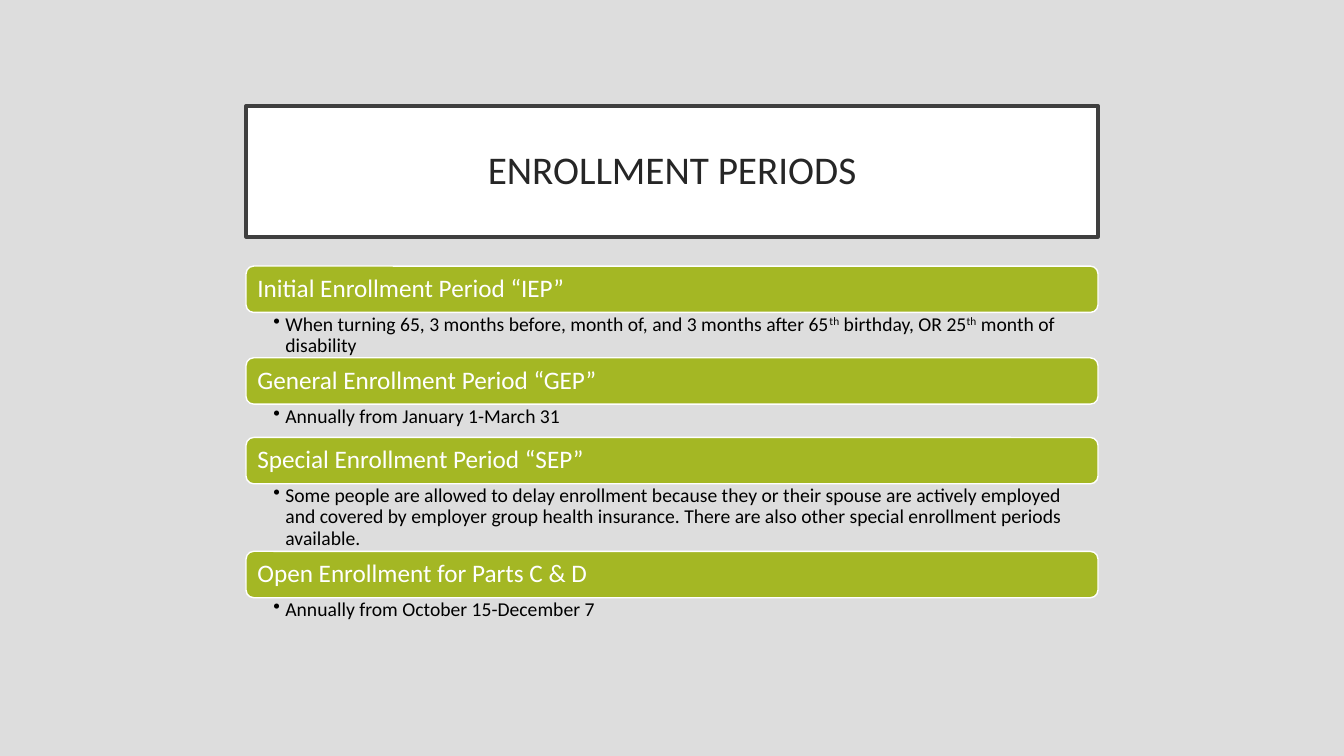
import pptx
import pptx.dml.color
import pptx.enum.shapes
import pptx.enum.text
import pptx.oxml
import pptx.oxml.ns
import pptx.util

RGBColor = pptx.dml.color.RGBColor
ANCHOR = pptx.enum.text.MSO_ANCHOR
ALIGN = pptx.enum.text.PP_ALIGN

PX = 9144  # 100 px to the inch
GREY = RGBColor(0xDD, 0xDD, 0xDD)
WHITE = RGBColor(0xFF, 0xFF, 0xFF)
GREEN = RGBColor(0xA4, 0xB7, 0x24)
FRAME = RGBColor(0x3F, 0x3F, 0x3F)
INK = RGBColor(0x26, 0x26, 0x26)
BLACK = RGBColor(0, 0, 0)

LEFT, WIDTH = 244, 845
BARS_TOP, BAR_HEIGHT = 264, 46

# Heading, height of the detail below it, and detail runs (odd ones are superscript)
PERIODS = [
    ("Initial Enrollment Period “IEP”", 45,
     ["When turning 65, 3 months before, month of, and 3 months after 65", "th",
      " birthday, OR 25", "th", " month of disability"]),
    ("General Enrollment Period “GEP”", 33, ["Annually from January 1-March 31"]),
    ("Special Enrollment Period “SEP”", 67,
     ["Some people are allowed to delay enrollment because they or their spouse "
      "are actively employed and covered by employer group health insurance. "
      "There are also other special enrollment periods available."]),
    ("Open Enrollment for Parts C & D", 33, ["Annually from October 15-December 7"]),
]


def px(n):
    return pptx.util.Emu(n * PX)


class Deck:
    font = "Calibri"

    def __init__(self, width, height):
        self.prs = pptx.Presentation()
        self.prs.slide_width, self.prs.slide_height = px(width), px(height)
        self.s = self.prs.slides.add_slide(self.prs.slide_layouts[5])
        fill = self.s.background.fill
        fill.solid()
        fill.fore_color.rgb = GREY

    def paint(self, sp, fill, line, weight):
        sp.fill.solid()
        sp.fill.fore_color.rgb = fill
        sp.line.color.rgb = line
        sp.line.width = pptx.util.Pt(weight)

    def frame(self, sp, anchor, insets):
        tf = sp.text_frame
        tf.word_wrap = True
        tf.auto_size = pptx.enum.text.MSO_AUTO_SIZE.NONE
        tf.vertical_anchor = anchor
        tf.margin_left, tf.margin_top, tf.margin_right, tf.margin_bottom = map(px, insets)
        return tf

    def style(self, p, size, color, align=ALIGN.LEFT):
        p.alignment = align
        p.line_spacing = 0.9
        p.space_before = p.space_after = pptx.util.Pt(0)
        for r in p.runs:
            r.font.name = self.font
            r.font.size = pptx.util.Pt(size)
            r.font.color.rgb = color

    def title(self, text, top, height):
        sp = self.s.shapes.title
        sp.left, sp.top, sp.width, sp.height = map(px, (LEFT, top, WIDTH, height))
        self.paint(sp, WHITE, FRAME, 2.5)
        tf = self.frame(sp, ANCHOR.MIDDLE, (20, 20, 20, 20))
        tf.text = text
        self.style(tf.paragraphs[0], 28, INK, ALIGN.CENTER)

    def bar(self, text, top):
        sp = self.s.shapes.add_shape(
            pptx.enum.shapes.MSO_SHAPE.ROUNDED_RECTANGLE,
            *map(px, (LEFT, top, WIDTH, BAR_HEIGHT)))
        sp.shadow.inherit = False
        self.paint(sp, GREEN, WHITE, 1)
        tf = self.frame(sp, ANCHOR.MIDDLE, (9, 9, 9, 9))
        tf.text = text
        self.style(tf.paragraphs[0], 18, WHITE)

    def detail(self, parts, top, height):
        sp = self.s.shapes.add_textbox(*map(px, (LEFT, top, WIDTH, height)))
        tf = self.frame(sp, ANCHOR.TOP, (27, 2, 14, 2))
        p = tf.paragraphs[0]
        for i, part in enumerate(parts):
            r = p.add_run()
            r.text = part
            if i % 2:
                r.font._element.set("baseline", "30000")
        self.style(p, 14, BLACK)
        self.bullet(p)

    def bullet(self, p):
        p.level = 1
        pPr = p._p.get_or_add_pPr()
        pPr.set("marL", str(px(12)))
        pPr.set("indent", str(-px(12)))
        pPr.append(pptx.oxml.parse_xml(
            f'<a:buChar {pptx.oxml.ns.nsdecls("a")} char="•"/>'))


def main():
    deck = Deck(1333, 750)
    deck.title("ENROLLMENT PERIODS", 105, 130)
    top = BARS_TOP
    for heading, height, parts in PERIODS:
        deck.bar(heading, top)
        deck.detail(parts, top + BAR_HEIGHT, height)
        top += BAR_HEIGHT + height
    deck.prs.save("out.pptx")


if __name__ == "__main__":
    main()
